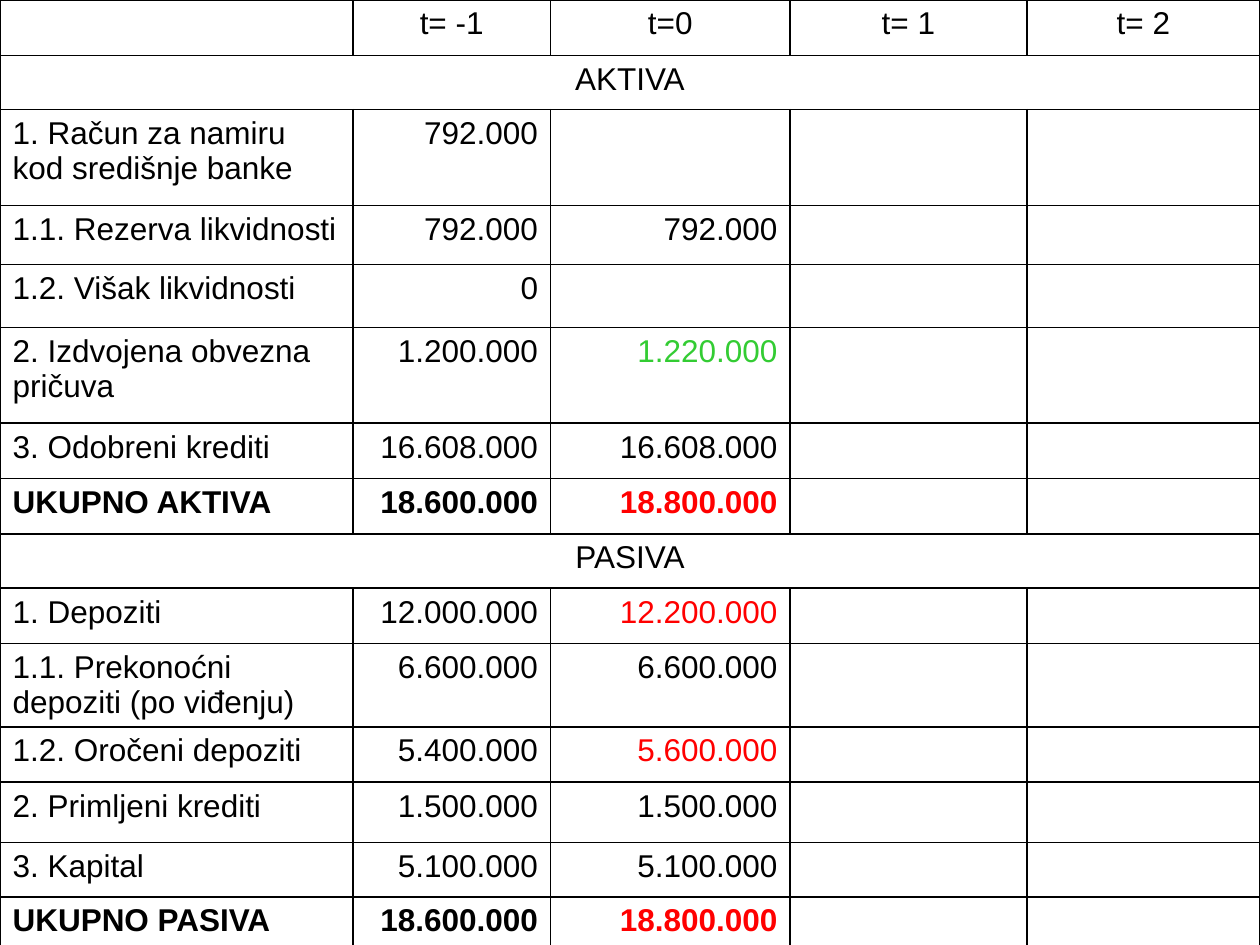
from lxml.etree import SubElement as Sub
from pptx import Presentation
from pptx.dml.color import RGBColor as Rgb
from pptx.enum.text import PP_ALIGN as Align
from pptx.oxml.ns import qn
from pptx.util import Inches, Pt

HUES = {"ink": "000000", "red": "FF0000", "green": "33CC33"}
WIDTHS = [2.8, 1.57, 1.9, 1.88, 1.85]
ROWS = [
    (0.44, "", "t= -1", "t=0", "t= 1", "t= 2"),
    (0.43, "AKTIVA"),
    (0.76, "1. Račun za namiru kod središnje banke", "792.000"),
    (0.47, "1.1. Rezerva likvidnosti", "792.000", "792.000"),
    (0.5, "1.2. Višak likvidnosti", "0"),
    (0.76, "2. Izdvojena obvezna pričuva", "1.200.000", "1.220.000"),
    (0.44, "3. Odobreni krediti", "16.608.000", "16.608.000"),
    (0.44, "UKUPNO AKTIVA", "18.600.000", "18.800.000"),
    (0.43, "PASIVA"),
    (0.44, "1. Depoziti", "12.000.000", "12.200.000"),
    (0.4, "1.1. Prekonoćni depoziti (po viđenju)", "6.600.000", "6.600.000"),
    (0.44, "1.2. Oročeni depoziti", "5.400.000", "5.600.000"),
    (0.48, "2. Primljeni krediti", "1.500.000", "1.500.000"),
    (0.43, "3. Kapital", "5.100.000", "5.100.000"),
    (0.44, "UKUPNO PASIVA", "18.600.000", "18.800.000"),
]
MARKS = {"1.220.000": "green", "18.800.000": "red",
         "12.200.000": "red", "5.600.000": "red"}


class Deck:
    """Holds the style and the current slide."""

    def __init__(self):
        self.font, self.size, self.line = "Arial", Pt(18), Pt(1)
        self.file = Presentation()
        self.file.slide_width, self.file.slide_height = Inches(10), Inches(7.5)
        self.slide = self.file.slides.add_slide(self.file.slide_layouts[6])

    def edge(self, cell):
        props = cell._tc.get_or_add_tcPr()
        for spot, side in enumerate(("lnL", "lnR", "lnT", "lnB")):
            line = Sub(props, qn(f"a:{side}"), w=str(self.line))
            fill = Sub(line, qn("a:solidFill"))
            Sub(fill, qn("a:srgbClr"), val=HUES["ink"])
            props.insert(spot, line)

    def label(self, cell, text, align, bold):
        cell.text_frame.text = text
        para = cell.text_frame.paragraphs[0]
        para.alignment = align
        for run in para.runs:
            font = run.font
            font.name, font.size, font.bold = self.font, self.size, bold
            font.color.rgb = Rgb.from_string(HUES[MARKS.get(text, "ink")])

    def table(self, rows, widths):
        high = sum(row[0] for row in rows)
        grid = self.slide.shapes.add_table(
            len(rows), len(widths), 0, 0, Inches(sum(widths)), Inches(high)).table
        grid.first_row = grid.horz_banding = False
        for col, width in zip(grid.columns, widths):
            col.width = Inches(width)
        for i, (height, *texts) in enumerate(rows):
            grid.rows[i].height = Inches(height)
            band = len(texts) == 1
            for cell in grid.rows[i].cells:
                cell.fill.background()
                self.edge(cell)
            if band:
                grid.cell(i, 0).merge(grid.cell(i, len(widths) - 1))
            for j, text in enumerate(texts):
                align = (Align.CENTER if band or i == 0
                         else Align.RIGHT if j else Align.LEFT)
                bold = texts[0].startswith("UKUPNO")
                self.label(grid.cell(i, j), text, align, bold)


def main():
    deck = Deck()
    deck.table(ROWS, WIDTHS)
    deck.file.save("out.pptx")


if __name__ == "__main__":
    main()
